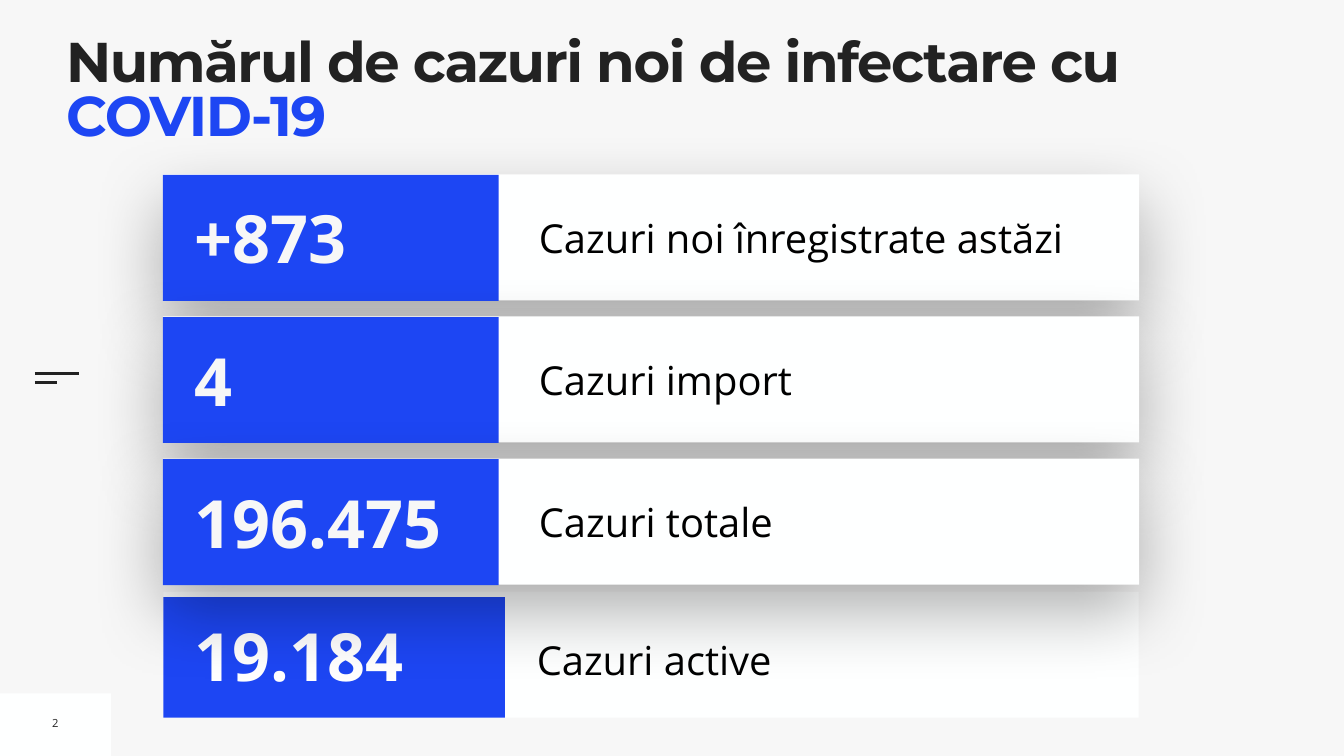
import pptx
import pptx.dml.color
import pptx.enum.shapes
import pptx.enum.text
import pptx.oxml
import pptx.oxml.ns
import pptx.util

COLS, ROWS = 80, 45
CELL = pptx.util.Emu(304800)
BLUE, WHITE, PALE, INK, BLACK = "1D46F3", "FEFFFF", "F7F7F7", "222222", "000000"
ANCHOR = pptx.enum.text.MSO_ANCHOR
FIT = pptx.enum.text.MSO_AUTO_SIZE
ALIGN = pptx.enum.text.PP_ALIGN
NS = pptx.oxml.ns.nsdecls("a")
NO_EFFECTS = f"<a:effectLst {NS}/>"
SOFT_SHADOW = f"""<a:effectLst {NS}>
  <a:outerShdw blurRad="1270000" dist="508000" dir="5400000" rotWithShape="0">
    <a:srgbClr val="000000"><a:alpha val="30000"/></a:srgbClr>
  </a:outerShdw>
</a:effectLst>"""


def color(hex_string):
    return pptx.dml.color.RGBColor.from_string(hex_string)


def grid(*cells):
    return [pptx.util.Emu(round(c * CELL)) for c in cells]


def write(p, text, size, fill, font="Open Sans", bold=False, spacing=None):
    """Add a run; spacing is the letter spacing in points."""
    r = p.add_run()
    r.text = text
    r.font.name, r.font.size, r.font.bold = font, pptx.util.Pt(size), bold
    r.font.color.rgb = color(fill)
    if spacing is not None:
        r._r.get_or_add_rPr().set("spc", str(spacing * 100))


def set_insets(tf, inches):
    inset = pptx.util.Inches(inches)
    tf.margin_left = tf.margin_top = tf.margin_right = tf.margin_bottom = inset


class Deck:
    def __init__(self):
        self.prs = pptx.Presentation()
        self.prs.slide_width, self.prs.slide_height = grid(COLS, ROWS)

    def new_slide(self):
        self.s = self.prs.slides.add_slide(self.prs.slide_layouts[5])
        self.s.background.fill.solid()
        self.s.background.fill.fore_color.rgb = color(PALE)

    def title(self, box, parts):
        sp = self.s.shapes.title
        sp.left, sp.top, sp.width, sp.height = grid(*box)
        tf = sp.text_frame
        tf.word_wrap, tf.auto_size = True, FIT.NONE
        tf.vertical_anchor = ANCHOR.TOP
        set_insets(tf, 0)
        p = tf.paragraphs[0]
        p.alignment, p.line_spacing = ALIGN.LEFT, 0.8
        for text, fill in parts:
            write(p, text, 80, fill, font="Montserrat", bold=True, spacing=-2)

    def rect(self, box, fill, parent=None, shadow=False):
        shapes = (parent or self.s).shapes
        sp = shapes.add_shape(pptx.enum.shapes.MSO_SHAPE.RECTANGLE, *grid(*box))
        sp.fill.solid()
        sp.fill.fore_color.rgb = color(fill)
        sp.line.fill.background()
        if shadow:
            sp._element.spPr.append(pptx.oxml.parse_xml(SOFT_SHADOW))
        else:
            sp.shadow.inherit = False

    def text(self, box, text, parent=None, inset=0.1, wrap=True,
             align=ALIGN.LEFT, line_spacing=None, before=None, **style):
        tf = (parent or self.s).shapes.add_textbox(*grid(*box)).text_frame
        tf.word_wrap, tf.auto_size = wrap, FIT.SHAPE_TO_FIT_TEXT
        tf.vertical_anchor = ANCHOR.MIDDLE
        set_insets(tf, inset)
        p = tf.paragraphs[0]
        p.alignment = align
        if line_spacing:
            p.line_spacing = line_spacing
        if before:
            p.space_before = pptx.util.Pt(before)
        write(p, text, **style)

    def rule(self, x1, x2, y):
        line = self.s.shapes.add_connector(
            pptx.enum.shapes.MSO_CONNECTOR.STRAIGHT, *grid(x1, y, x2, y))
        line.line.color.rgb = color(INK)
        line.line.width = pptx.util.Pt(3)
        line._element.spPr.append(pptx.oxml.parse_xml(NO_EFFECTS))

    def figure_row(self, number, label, card, label_box, tile, number_box,
                   number_fill=PALE, shadow=True, **label_style):
        """Group a white card with its label and a blue tile with its number."""
        group = self.s.shapes.add_group_shape()
        self.rect(card, WHITE, group, shadow)
        self.text(label_box, label, group, size=57, fill=BLACK, **label_style)
        self.rect(tile, BLUE, group)
        self.text(number_box, number, group, size=95, fill=number_fill, bold=True)


def main():
    deck = Deck()
    deck.new_slide()
    deck.rect((0, 41.28, 6.6, 3.72), WHITE)
    deck.rule(2.07, 4.71, 22.23)
    deck.rule(2.07, 3.39, 22.77)
    deck.text((2.79, 42.27, 1.02, 1.53), "2", wrap=False, align=ALIGN.CENTER,
              size=16, fill=INK)
    deck.title((3.93, 2.34, 71.82, 4.74),
               [("Numărul de cazuri noi de infectare cu ", INK), ("COVID-19", BLUE)])

    deck.figure_row("19.184", "Cazuri active",
                    card=(9.72, 35.22, 58.05, 7.5),
                    label_box=(31.95, 36.96, 34.74, 3.75),
                    tile=(9.72, 35.55, 20.34, 7.17),
                    number_box=(11.31, 36.27, 18.09, 5.4),
                    number_fill="FFFFFF", shadow=False,
                    inset=0, line_spacing=1.3, before=20)

    left, top, pitch = 9.7, 10.38, 8.46
    rows = [("+873", "Cazuri noi înregistrate astăzi"),
            ("4", "Cazuri import"),
            ("196.475", "Cazuri totale")]
    for i, (number, label) in enumerate(rows):
        y = top + i * pitch
        deck.figure_row(number, label,
                        card=(left, y, 58.1, 7.5),
                        label_box=(left + 22.08, y + 2.01, 35.28, 3.48),
                        tile=(left, y + 0.03, 19.98, 7.5),
                        number_box=(left + 1.59, y + 1.05, 18.09, 5.4))

    deck.prs.save("out.pptx")


if __name__ == "__main__":
    main()
